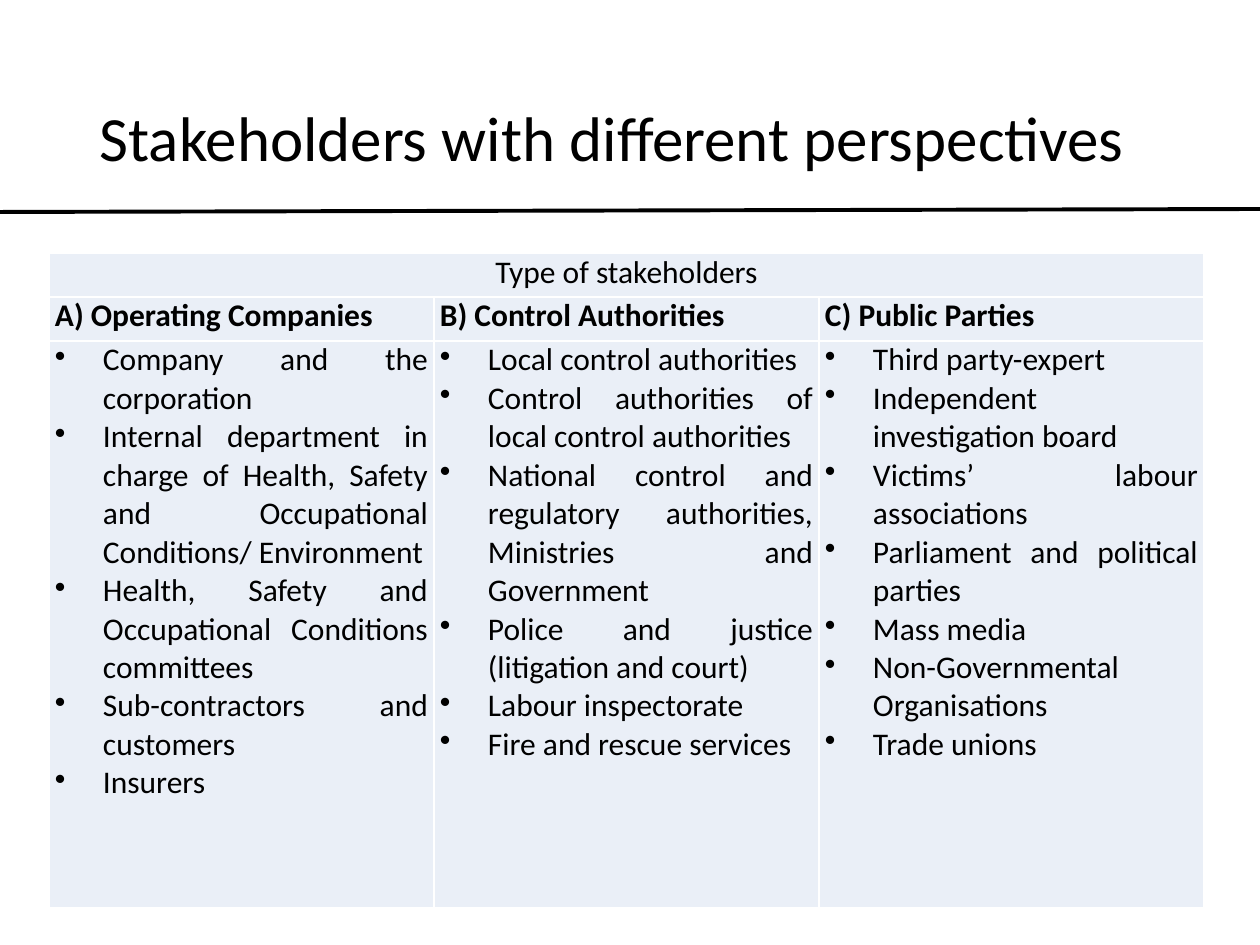
from lxml import etree
from pptx import Presentation
from pptx.dml.color import RGBColor
from pptx.enum.shapes import MSO_CONNECTOR
from pptx.enum.text import MSO_ANCHOR, PP_ALIGN
from pptx.oxml.ns import qn
from pptx.util import Pt

STRAIGHT = MSO_CONNECTOR.STRAIGHT
MIDDLE = MSO_ANCHOR.MIDDLE
LEFT, CENTER, JUSTIFY = PP_ALIGN.LEFT, PP_ALIGN.CENTER, PP_ALIGN.JUSTIFY
EMU_PER_PX = 914400 / 126

THEME = {
    "font": "Calibri",
    "ink": RGBColor(0, 0, 0),
    "cell": RGBColor(0xEA, 0xEF, 0xF7),
    "border": "FFFFFF",
    "title_size": Pt(36),
    "body_size": Pt(18),
    "rule_width": Pt(2.25),
    "border_width": Pt(1),
}

STAKEHOLDERS = {
    "A) Operating Companies": [
        "Company and the corporation",
        "Internal department in charge of Health, Safety and Occupational Conditions/ Environment",
        "Health, Safety and Occupational Conditions committees",
        "Sub-contractors and customers",
        "Insurers",
    ],
    "B) Control Authorities": [
        "Local control authorities",
        "Control authorities of local control authorities",
        "National control and regulatory authorities, Ministries and Government",
        "Police and justice (litigation and court)",
        "Labour inspectorate",
        "Fire and rescue services",
    ],
    "C) Public Parties": [
        "Third party-expert",
        "Independent investigation board",
        "Victims’ labour associations",
        "Parliament and political parties",
        "Mass media",
        "Non-Governmental Organisations",
        "Trade unions",
    ],
}


def px(length):
    return round(length * EMU_PER_PX)


def write(paragraph, text, size, align, bold=False, bullet=False):
    """Fill one paragraph, optionally as a hanging bullet."""
    if bullet:
        properties = paragraph._p.get_or_add_pPr()
        properties.set("marL", str(px(48)))
        properties.set("indent", str(px(-48)))
        etree.SubElement(properties, qn("a:buChar"), char="•")
    paragraph.alignment = align
    run = paragraph.add_run()
    run.text = text
    for key, value in {"name": THEME["font"], "size": size, "bold": bold}.items():
        setattr(run.font, key, value)
    run.font.color.rgb = THEME["ink"]


prs = Presentation()
prs.slide_width, prs.slide_height = px(1260), px(945)
slide = prs.slides.add_slide(prs.slide_layouts[5])

title = slide.shapes.title
title_box = {"left": px(87), "top": px(50), "width": px(1086), "height": px(183)}
for key, value in title_box.items():
    setattr(title, key, value)
title.text_frame.vertical_anchor = MIDDLE
heading = title.text_frame.paragraphs[0]
heading.line_spacing = 0.9
write(heading, "Stakeholders with different perspectives", THEME["title_size"], LEFT)

rule = slide.shapes.add_connector(STRAIGHT, 0, px(212), px(1260), px(209))
rule.line.color.rgb = THEME["ink"]
rule.line.width = THEME["rule_width"]
etree.SubElement(rule._element.spPr, qn("a:effectLst"))

row_heights = [44, 44, 567]
table = slide.shapes.add_table(
    len(row_heights), len(STAKEHOLDERS), px(49), px(253), px(1155), px(sum(row_heights))
).table
table.first_row = table.horz_banding = False
for row, height in zip(table.rows, row_heights):
    row.height = px(height)
for column in table.columns:
    column.width = px(385)

cell_margins = {
    "margin_left": px(6), "margin_right": px(6), "margin_top": 0, "margin_bottom": 0,
}
for cell in table.iter_cells():
    for key, value in cell_margins.items():
        setattr(cell, key, value)
    cell_properties = cell._tc.get_or_add_tcPr()
    for side in ("lnL", "lnR", "lnT", "lnB"):
        border = etree.SubElement(
            cell_properties, qn(f"a:{side}"), w=str(THEME["border_width"]))
        border_fill = etree.SubElement(border, qn("a:solidFill"))
        etree.SubElement(border_fill, qn("a:srgbClr"), val=THEME["border"])
    cell.fill.solid()
    cell.fill.fore_color.rgb = THEME["cell"]

header = table.cell(0, 0)
header.merge(table.cell(0, len(STAKEHOLDERS) - 1))
header_line = header.text_frame.paragraphs[0]
write(header_line, "Type of stakeholders", THEME["body_size"], CENTER)
header_line.space_after = Pt(6)

for index, (group, members) in enumerate(STAKEHOLDERS.items()):
    group_line = table.cell(1, index).text_frame.paragraphs[0]
    write(group_line, group, THEME["body_size"], JUSTIFY, bold=True)
    group_line.space_after = Pt(6)
    member_list = table.cell(2, index).text_frame
    for position, member in enumerate(members):
        member_line = member_list.add_paragraph() if position else member_list.paragraphs[0]
        write(member_line, member, THEME["body_size"], JUSTIFY, bullet=True)

prs.save("out.pptx")
